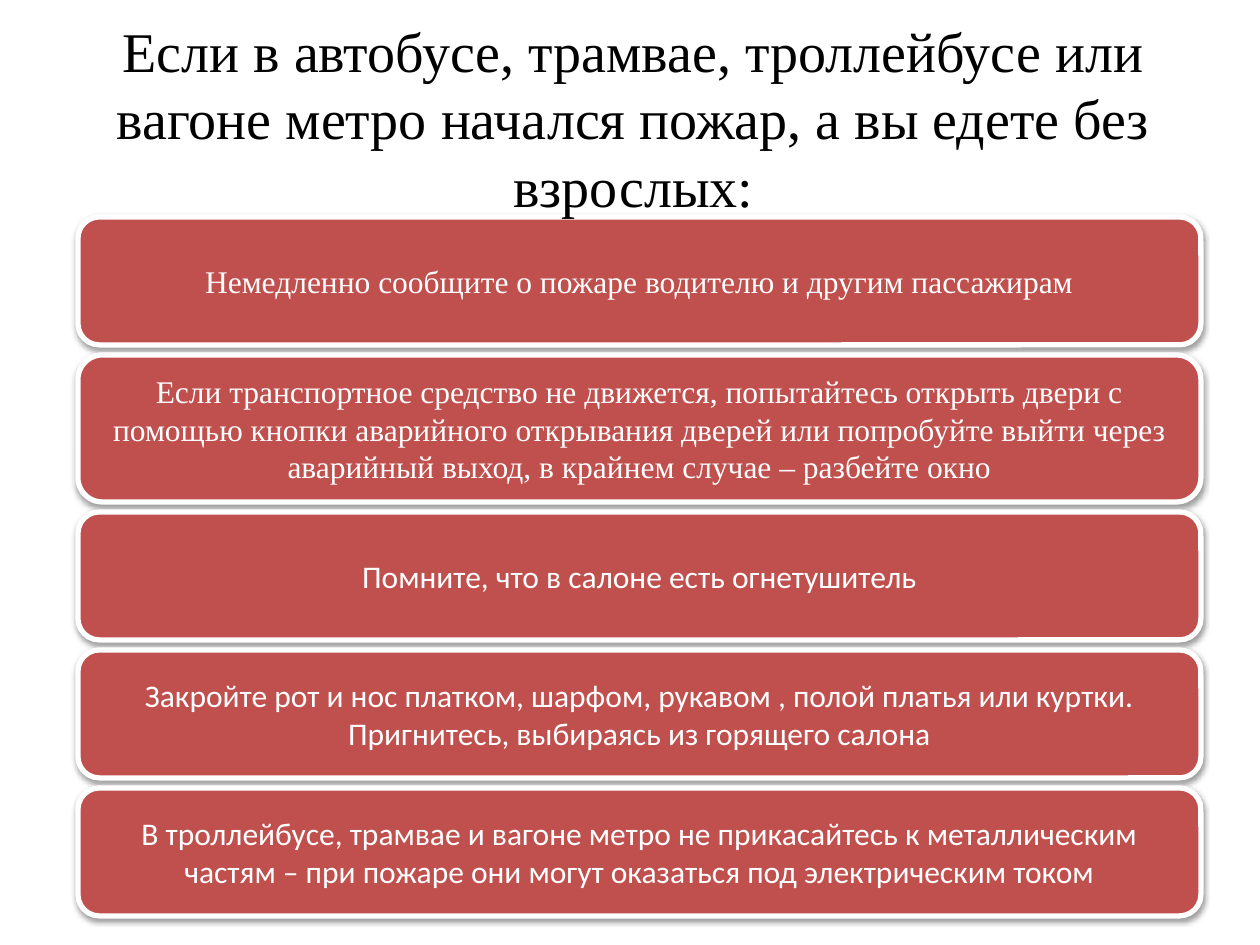
from dataclasses import dataclass

from lxml import etree
from pptx import Presentation, util as u
from pptx.dml.color import RGBColor
from pptx.enum import shapes, text
from pptx.oxml.ns import qn

PX = 914400 / 126  # EMU in one px


@dataclass(frozen=True)
class Theme:
    background: str = "FFFFFF"
    ink: str = "000000"
    card: str = "C0504D"
    light: str = "FFFFFF"
    shadow: str = "000000"
    serif: str = "Times New Roman"
    sans: str = "Calibri"
    title_size: int = 32
    card_size: int = 18
    outline: int = 3


def px(n):
    return u.Emu(round(n * PX))


class Deck:
    def __init__(self, theme):
        self.theme = theme
        self.prs = Presentation()
        self.prs.slide_width, self.prs.slide_height = px(1260), px(945)
        self.s = self.prs.slides.add_slide(self.prs.slide_layouts[6])
        fill = self.s.background.fill
        fill.solid()
        fill.fore_color.rgb = RGBColor.from_string(theme.background)

    def label(self, sp, words, font, size, color):
        tf = sp.text_frame
        frame_format = {"word_wrap": True, "vertical_anchor": text.MSO_ANCHOR.MIDDLE}
        for name, value in frame_format.items():
            setattr(tf, name, value)
        p = tf.paragraphs[0]
        p.alignment = text.PP_ALIGN.CENTER
        r = p.add_run()
        r.text = words
        for name, value in {"name": font, "size": u.Pt(size)}.items():
            setattr(r.font, name, value)
        r.font.color.rgb = RGBColor.from_string(color)

    def title(self, box, words):
        sp = self.s.shapes.add_textbox(*map(px, box))
        self.label(sp, words, self.theme.serif, self.theme.title_size, self.theme.ink)

    def card(self, box, words, font):
        t = self.theme
        sp = self.s.shapes.add_shape(shapes.MSO_SHAPE.ROUNDED_RECTANGLE, *map(px, box))
        sp.fill.solid()
        sp.fill.fore_color.rgb = RGBColor.from_string(t.card)
        sp.line.color.rgb = RGBColor.from_string(t.light)
        sp.line.width = u.Pt(t.outline)
        self.shadow(sp)
        self.label(sp, words, font, t.card_size, t.light)

    def shadow(self, sp):
        sp.shadow.inherit = False
        effects = sp._element.spPr.find(qn("a:effectLst"))
        outer = etree.SubElement(effects, qn("a:outerShdw"), blurRad="40000",
                                 dist="20000", dir="5400000", rotWithShape="0")
        color = etree.SubElement(outer, qn("a:srgbClr"), val=self.theme.shadow)
        etree.SubElement(color, qn("a:alpha"), val="38000")


def main():
    theme = Theme()
    deck = Deck(theme)

    # Stack of advice cards: height, font, wording
    left, top, width, gap = 78, 217, 1123, 10
    cards = [
        (128, theme.serif, "Немедленно сообщите о пожаре водителю и другим пассажирам"),
        (147, theme.serif, "Если транспортное средство не движется, попытайтесь открыть двери с "
                           "помощью кнопки аварийного открывания дверей или попробуйте выйти "
                           "через аварийный выход, в крайнем случае – разбейте окно"),
        (128, theme.sans, "Помните, что в салоне есть огнетушитель"),
        (128, theme.sans, "Закройте рот и нос платком, шарфом, рукавом , полой платья или "
                          "куртки. Пригнитесь, выбираясь из горящего салона"),
        (128, theme.sans, "В троллейбусе, трамвае и вагоне метро не прикасайтесь к "
                          "металлическим частям – при пожаре они могут оказаться под "
                          "электрическим током"),
    ]
    for height, font, words in cards:
        deck.card((left, top, width, height), words, font)
        top += height + gap

    # Title, in front of the first card
    deck.title((98, 49, 1071, 137), "Если в автобусе, трамвае, троллейбусе или вагоне метро "
                                    "начался пожар, а вы едете без взрослых:")

    deck.prs.save("out.pptx")


if __name__ == "__main__":
    main()
